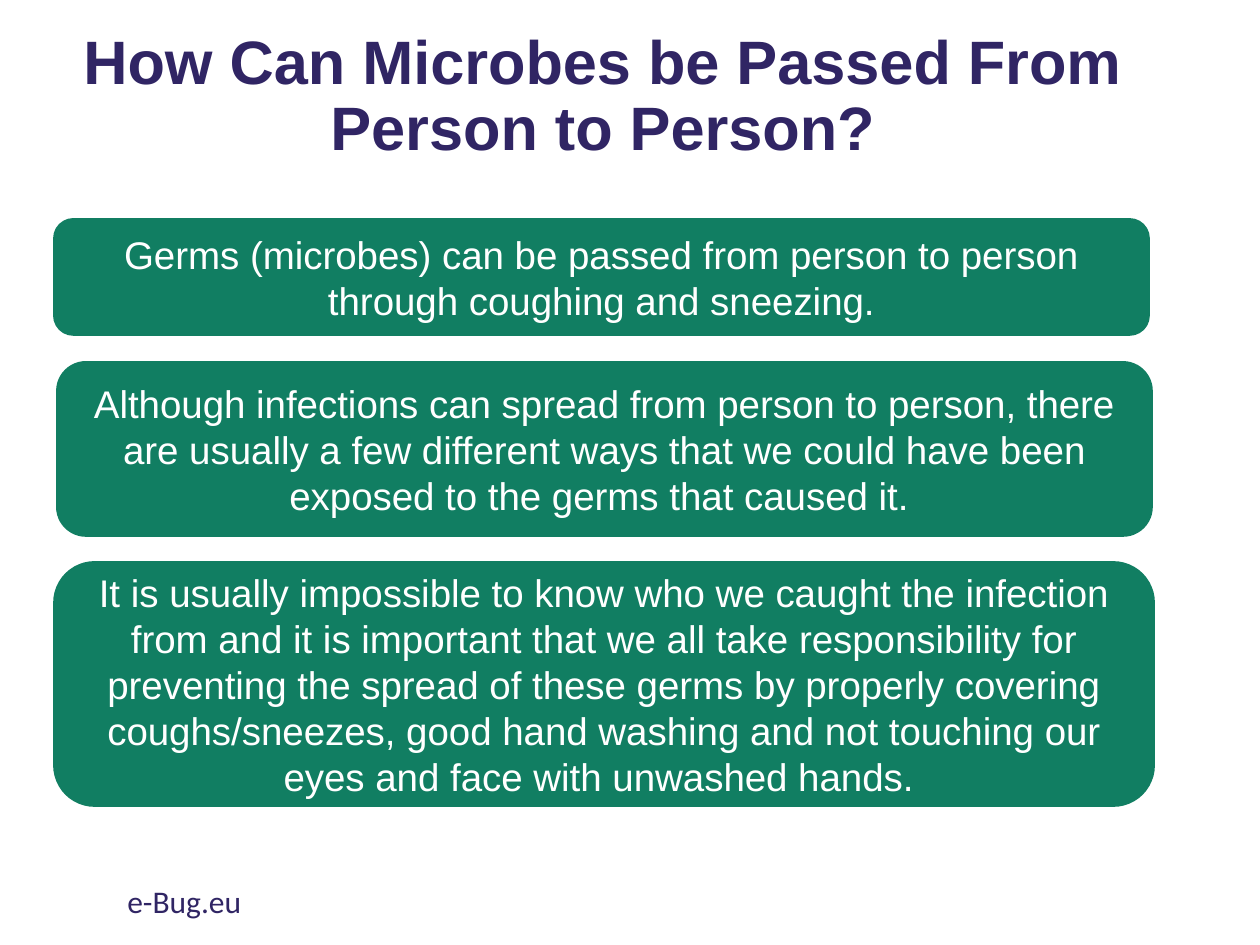
from pptx import Presentation
from pptx.dml.color import RGBColor
from pptx.enum.shapes import MSO_SHAPE
from pptx.enum.text import MSO_ANCHOR, PP_ALIGN
from pptx.util import Emu, Pt

PIXELS_PER_INCH = 126
NAVY = "302564"
GREEN = "117E62"
WHITE = "FFFFFF"

MESSAGES = [
    ((54, 219, 1095, 116),
     "Germs (microbes) can be passed from person to person through coughing and sneezing."),
    ((57, 362, 1095, 174),
     "Although infections can spread from person to person, there are usually a few different "
     "ways that we could have been exposed to the germs that caused it. "),
    ((54, 562, 1100, 244),
     "It is usually impossible to know who we caught the infection from and it is important "
     "that we all take responsibility for preventing the spread of these germs by properly "
     "covering coughs/sneezes, good hand washing and not touching our eyes and face with "
     "unwashed hands. "),
]


def px(length):
    return Emu(round(length * 914400 / PIXELS_PER_INCH))


def color(value):
    return RGBColor.from_string(value)


def set_attributes(target, values):
    for name, value in values.items():
        setattr(target, name, value)


def write_text(shape, text, font, font_color, paragraph_format, anchor):
    set_attributes(shape.text_frame, {"word_wrap": True, "vertical_anchor": anchor})
    paragraph = shape.text_frame.paragraphs[0]
    set_attributes(paragraph, paragraph_format)
    run = paragraph.add_run()
    run.text = text
    set_attributes(run.font, font)
    run.font.color.rgb = color(font_color)


def add_label(slide, bounds, text, font, paragraph_format, anchor):
    shape = slide.shapes.add_textbox(*map(px, bounds))
    write_text(shape, text, font, NAVY, paragraph_format, anchor)


def add_message(slide, bounds, text):
    shape = slide.shapes.add_shape(MSO_SHAPE.ROUNDED_RECTANGLE, *map(px, bounds))
    shape.shadow.inherit = False
    shape.fill.solid()
    shape.fill.fore_color.rgb = color(GREEN)
    shape.line.color.rgb = color(GREEN)
    shape.line.width = Pt(1)
    write_text(shape, text, {"name": "Arial", "size": Pt(22)}, WHITE,
               {"alignment": PP_ALIGN.CENTER}, MSO_ANCHOR.MIDDLE)


def main():
    presentation = Presentation()
    set_attributes(presentation, {"slide_width": px(1260), "slide_height": px(945)})
    slide = presentation.slides.add_slide(presentation.slide_layouts[6])
    add_label(slide, (115, 876, 426, 50), "e-Bug.eu",
              {"name": "Calibri", "size": Pt(18)}, {}, MSO_ANCHOR.TOP)
    for bounds, text in MESSAGES:
        add_message(slide, bounds, text)
    add_label(slide, (60, 6, 1086, 183), "How Can Microbes be Passed From Person to Person?",
              {"name": "Arial", "size": Pt(35), "bold": True},
              {"alignment": PP_ALIGN.CENTER, "line_spacing": 0.9}, MSO_ANCHOR.MIDDLE)
    presentation.save("out.pptx")


if __name__ == "__main__":
    main()
